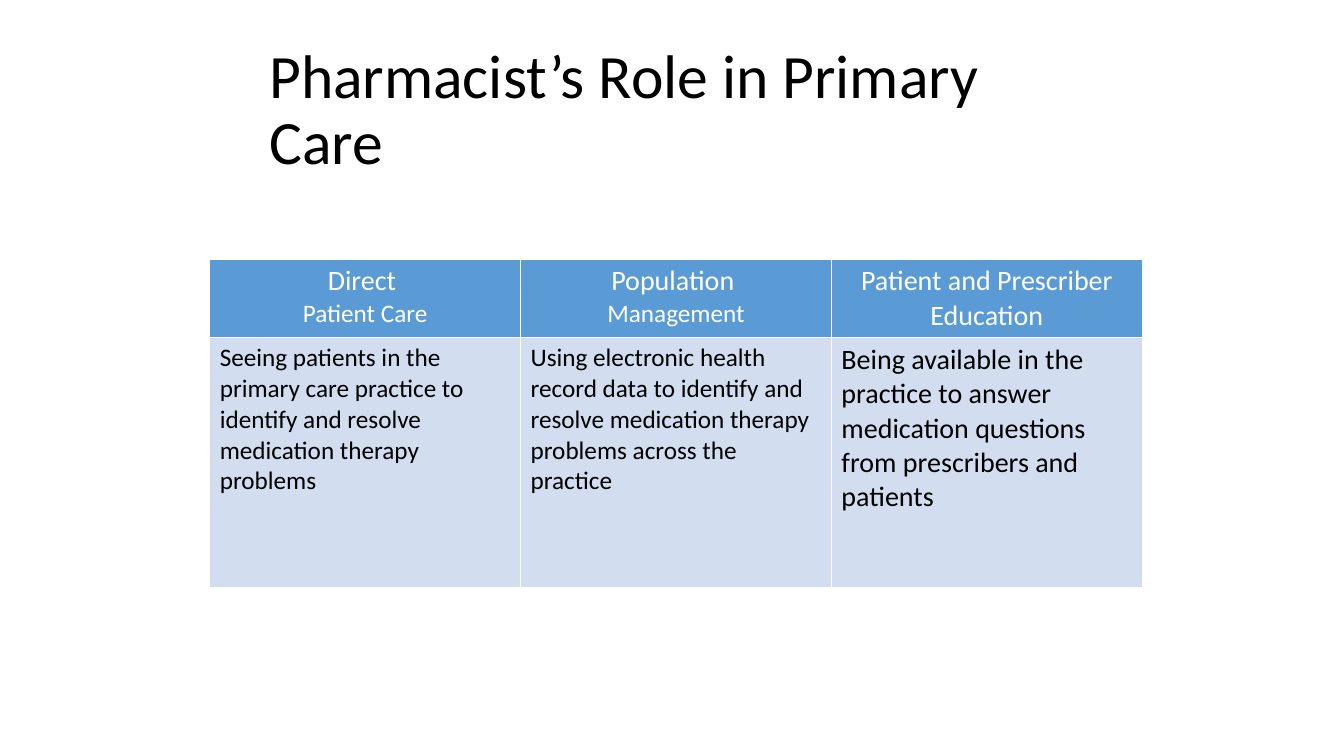
from dataclasses import dataclass

from lxml import etree
from pptx import Presentation
from pptx import util as u
from pptx.dml.color import RGBColor
from pptx.enum import text
from pptx.oxml import ns


@dataclass(frozen=True)
class Theme:
    font: str = "Calibri"
    ink: str = "000000"
    paper: str = "FFFFFF"
    header: str = "5B9BD5"
    body: str = "D2DEEF"
    title_size: int = 44
    large: int = 20
    small: int = 18
    border: float = 1


THEME = Theme()

# Each cell is a list of (wording, size) paragraphs
ROLES = [
    [
        [("Direct ", THEME.large), ("Patient Care", THEME.small)],
        [("Population ", THEME.large), ("Management", THEME.small)],
        [("Patient and Prescriber Education", THEME.large)],
    ],
    [
        [("Seeing patients in the primary care practice to identify and "
          "resolve medication therapy problems", THEME.small)],
        [("Using electronic health record data to identify and resolve "
          "medication therapy problems across the practice", THEME.small)],
        [("Being available in the practice to answer medication questions "
          "from prescribers and patients", THEME.large)],
    ],
]


def style_font(font, size, color):
    font.name = THEME.font
    font.size = u.Pt(size)
    font.color.rgb = RGBColor.from_string(color)


def add_borders(cell):
    properties = cell._tc.get_or_add_tcPr()
    for side in ("lnL", "lnR", "lnT", "lnB"):
        line = etree.SubElement(properties, ns.qn(f"a:{side}"),
                                w=str(u.Pt(THEME.border)))
        fill = etree.SubElement(line, ns.qn("a:solidFill"))
        etree.SubElement(fill, ns.qn("a:srgbClr"), val=THEME.paper)


def fill_cell(cell, lines, fill, color, align):
    add_borders(cell)
    cell.fill.solid()
    cell.fill.fore_color.rgb = RGBColor.from_string(fill)
    frame = cell.text_frame
    frame.text = "\n".join(wording for wording, size in lines)
    for para, (wording, size) in zip(frame.paragraphs, lines):
        para.alignment = align
        style_font(para.font, size, color)


def place_title(page, left, top, width, height):
    title = page.shapes.title
    title.left, title.top = u.Inches(left), u.Inches(top)
    title.width, title.height = u.Inches(width), u.Inches(height)
    frame = title.text_frame
    frame.text = "Pharmacist’s Role in Primary Care"
    frame.word_wrap = True
    frame.auto_size = text.MSO_AUTO_SIZE.NONE
    frame.vertical_anchor = text.MSO_ANCHOR.MIDDLE
    para = frame.paragraphs[0]
    para.alignment = text.PP_ALIGN.LEFT
    para.line_spacing = 0.9
    style_font(para.font, THEME.title_size, THEME.ink)


def place_roles_table(page, left, top, width, header_height, body_height):
    table = page.shapes.add_table(
        len(ROLES), len(ROLES[0]), u.Inches(left), u.Inches(top),
        u.Inches(width), u.Inches(header_height + body_height)).table
    looks = [
        (header_height, THEME.header, THEME.paper, text.PP_ALIGN.CENTER),
        (body_height, THEME.body, THEME.ink, text.PP_ALIGN.LEFT),
    ]
    for row, contents, (height, *look) in zip(table.rows, ROLES, looks):
        row.height = u.Inches(height)
        for cell, lines in zip(row.cells, contents):
            fill_cell(cell, lines, *look)


def main():
    deck = Presentation()
    deck.slide_width, deck.slide_height = u.Inches(13.33), u.Inches(7.5)
    page = deck.slides.add_slide(deck.slide_layouts[5])
    # Title
    place_title(page, 2.57, 0.31, 8.43, 1.59)
    # Three roles with their descriptions
    place_roles_table(page, 2.08, 2.57, 9.25, 0.77, 2.48)
    deck.save("out.pptx")


if __name__ == "__main__":
    main()
